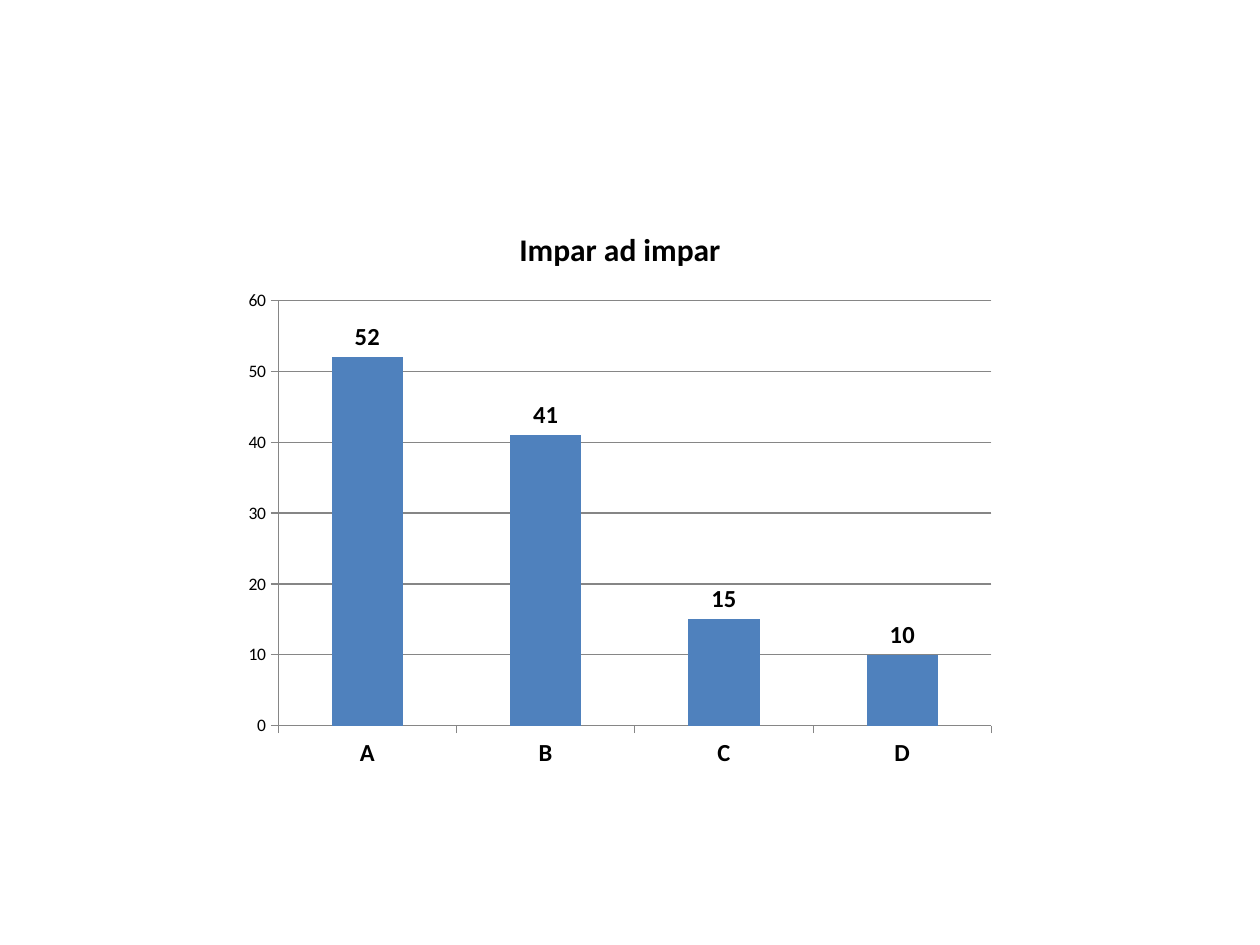
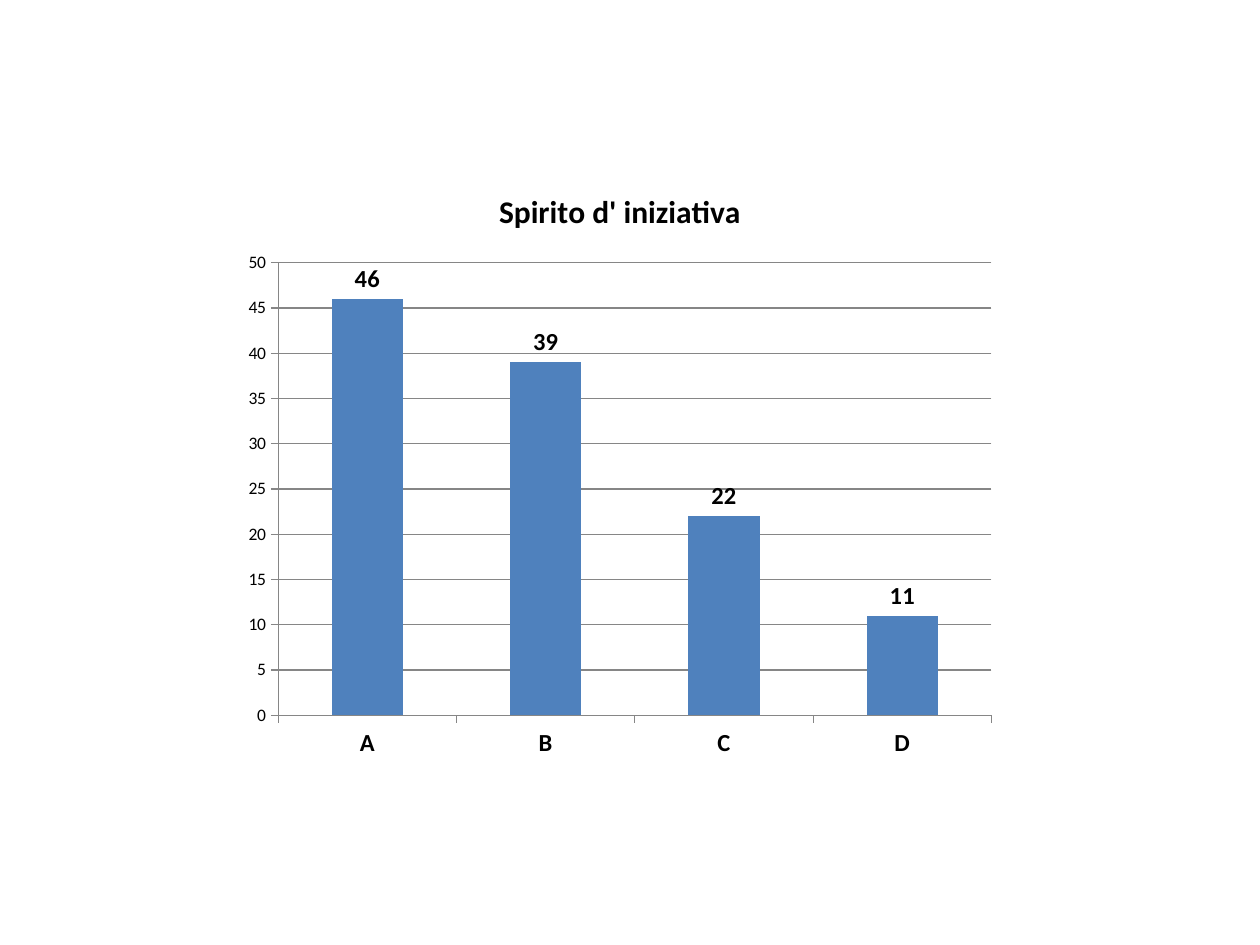
from pptx import Presentation
from pptx.chart.data import CategoryChartData
from pptx.dml.color import RGBColor
from pptx.enum.chart import XL_CHART_TYPE, XL_LABEL_POSITION, XL_TICK_MARK
from pptx.util import Emu, Pt

CATEGORIES = ["A", "B", "C", "D"]
CHARTS = [
    {"title": "Impar ad impar", "values": [52, 41, 15, 10],
     "top": 204, "height": 576, "maximum": 60, "step": 10},
    {"title": "Spirito d' iniziativa", "values": [46, 39, 22, 11],
     "top": 165, "height": 605, "maximum": 50, "step": 5},
]
LEFT, WIDTH = 233, 774
SLIDE_WIDTH, SLIDE_HEIGHT = 1260, 945
FONT, TEXT, BAR, LINE = "Calibri", "000000", "4F81BD", "868686"


def px(n):
    return Emu(round(n * 914400 / 126))


def color(value):
    return RGBColor.from_string(value)


def style_font(font, size=10, bold=False):
    font.name = FONT
    font.size = Pt(size)
    font.bold = bold
    font.color.rgb = color(TEXT)


def add_title(chart, text, **style):
    chart.has_title = True
    r = chart.chart_title.text_frame.paragraphs[0].add_run()
    r.text = text
    style_font(r.font, **style)
    chart.chart_title.include_in_layout = False


def style_line(line):
    line.color.rgb = color(LINE)
    line.width = Pt(0.75)


def style_axis(axis, **style):
    axis.major_tick_mark = XL_TICK_MARK.OUTSIDE
    axis.minor_tick_mark = XL_TICK_MARK.NONE
    style_line(axis.format.line)
    style_font(axis.tick_labels.font, **style)


def add_bar_chart(s, title, values, top, height, maximum, step):
    data = CategoryChartData()
    data.categories = CATEGORIES
    data.add_series(title, values)
    chart = s.shapes.add_chart(XL_CHART_TYPE.COLUMN_CLUSTERED, px(LEFT), px(top),
                               px(WIDTH), px(height), data).chart
    style_font(chart.font)
    chart.has_legend = False
    add_title(chart, title, size=18, bold=True)

    style_axis(chart.category_axis, size=14, bold=True)
    axis = chart.value_axis
    style_axis(axis)
    axis.minimum_scale, axis.maximum_scale, axis.major_unit = 0, maximum, step
    axis.has_major_gridlines = True
    style_line(axis.major_gridlines.format.line)

    plot = chart.plots[0]
    plot.gap_width = 150
    plot.vary_by_categories = False
    fill = plot.series[0].format.fill
    fill.solid()
    fill.fore_color.rgb = color(BAR)
    plot.has_data_labels = True
    labels = plot.data_labels
    labels.show_value = True
    labels.position = XL_LABEL_POSITION.OUTSIDE_END
    style_font(labels.font, size=14, bold=True)


def main():
    prs = Presentation()
    prs.slide_width, prs.slide_height = px(SLIDE_WIDTH), px(SLIDE_HEIGHT)
    for item in CHARTS:
        add_bar_chart(prs.slides.add_slide(prs.slide_layouts[6]), **item)
    prs.save("out.pptx")


if __name__ == "__main__":
    main()
